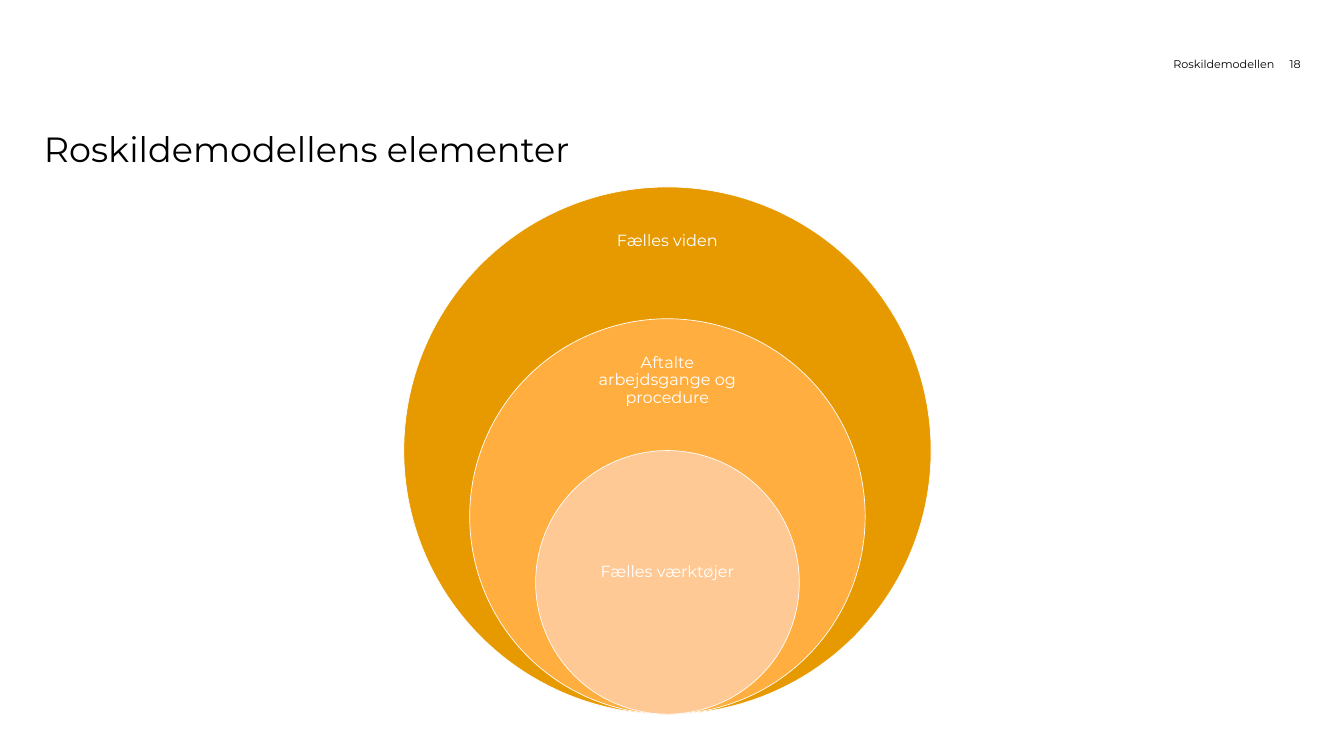
"""Build the slide with the nested circles of Roskildemodellen."""
from pptx import Presentation
from pptx.dml.color import RGBColor
from pptx.enum.shapes import MSO_SHAPE
from pptx.enum.text import MSO_ANCHOR, PP_ALIGN
from pptx.util import Inches, Pt

OVAL = MSO_SHAPE.OVAL
MIDDLE, TOP = MSO_ANCHOR.MIDDLE, MSO_ANCHOR.TOP
LEFT, CENTER, RIGHT = PP_ALIGN.LEFT, PP_ALIGN.CENTER, PP_ALIGN.RIGHT

FONT = "Montserrat"
COLORS = {"outer": "E79A00", "middle": "FFAE3F", "inner": "FFC995",
          "white": "FFFFFF", "black": "000000"}

TITLE = ("Roskildemodellens elementer", (0.87, 2.53, 24.92, 1.66))
HEADER = [
    ("Roskildemodellen", (19.95, 1.13, 5.33, 0.35)),
    ("18", (25.28, 1.13, 0.52, 0.35)),
]
CIRCLES = [
    {"color": "outer", "share": 1, "label": "Fælles viden",
     "top": 4.24, "width": 3.65, "height": 1.57, "bottom_inset": 0.64},
    {"color": "middle", "share": 0.75, "label": "Aftalte arbejdsgange og procedure",
     "top": 6.82, "width": 3.65, "height": 1.47, "bottom_inset": 0.18},
    {"color": "inner", "share": 0.5, "label": "Fælles værktøjer",
     "top": 10.25, "width": 3.7, "height": 2.61, "bottom_inset": 0.6},
]
DIAMETER, CENTER_X, BOTTOM = 10.46, 13.24, 14.17
INSET = 0.18


def rgb(name):
    return RGBColor.from_string(COLORS[name])


def add_text(s, text, box, size, color="black", align=LEFT, anchor=TOP,
             insets=(0, 0, 0, 0), spacing=None):
    tf = s.shapes.add_textbox(*map(Inches, box)).text_frame
    tf.word_wrap = True
    tf.vertical_anchor = anchor
    tf.margin_left, tf.margin_top, tf.margin_right, tf.margin_bottom = map(Inches, insets)
    p = tf.paragraphs[0]
    p.text = text
    p.alignment = align
    p.line_spacing = spacing
    p.font.name, p.font.size = FONT, Pt(size)
    p.font.color.rgb = rgb(color)


def add_circle(s, color, share):
    d = DIAMETER * share
    sp = s.shapes.add_shape(OVAL, Inches(CENTER_X - d / 2), Inches(BOTTOM - d),
                            Inches(d), Inches(d))
    sp.shadow.inherit = False
    sp.fill.solid()
    sp.fill.fore_color.rgb = rgb(color)
    sp.line.color.rgb = rgb("white")
    sp.line.width = Pt(1)


def main():
    prs = Presentation()
    prs.slide_width, prs.slide_height = Inches(26.66), Inches(15)
    s = prs.slides.add_slide(prs.slide_layouts[6])
    add_text(s, *TITLE, 50, spacing=Pt(60))
    for text, box in HEADER:
        add_text(s, text, box, 16, align=RIGHT)
    for c in CIRCLES:
        add_circle(s, c["color"], c["share"])
        box = (CENTER_X - c["width"] / 2, c["top"], c["width"], c["height"])
        add_text(s, c["label"], box, 23, "white", CENTER, MIDDLE,
                 (INSET, INSET, INSET, c["bottom_inset"]), 0.9)
    prs.save("out.pptx")


if __name__ == "__main__":
    main()
